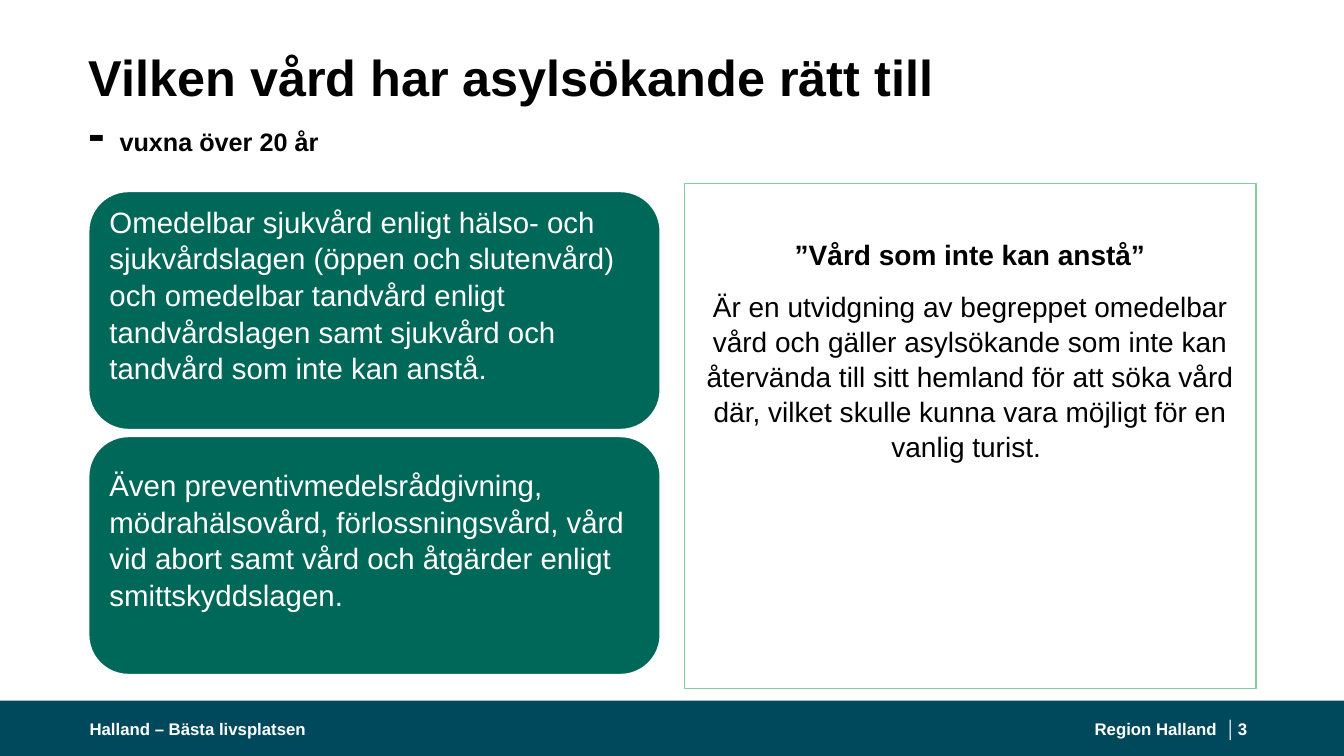
from dataclasses import dataclass

from pptx import Presentation
from pptx.dml.color import RGBColor
from pptx.enum import shapes, text
from pptx.util import Pt

INK = {"white": "FFFFFF", "black": "000000", "navy": "00495D",
       "green": "006858", "mint": "82CD9E"}
LEFT, MID, RIGHT = text.PP_ALIGN.LEFT, text.PP_ALIGN.CENTER, text.PP_ALIGN.RIGHT
RECT, ROUND = shapes.MSO_SHAPE.RECTANGLE, shapes.MSO_SHAPE.ROUNDED_RECTANGLE


@dataclass
class Box:
    x: float
    y: float
    w: float
    h: float

    def place(self) -> list:
        return [Pt(v) for v in (self.x, self.y, self.w, self.h)]


@dataclass
class Label:
    words: str
    box: Box
    align: int


CARDS = [
    "Omedelbar sjukvård enligt hälso- och sjukvårdslagen (öppen och slutenvård) "
    "och omedelbar tandvård enligt tandvårdslagen samt sjukvård och tandvård "
    "som inte kan anstå.",
    "Även preventivmedelsrådgivning, mödrahälsovård, förlossningsvård, vård vid "
    "abort samt vård och åtgärder enligt smittskyddslagen.",
]
FOOT = [
    Label("Halland – Bästa livsplatsen", Box(64, 508.4, 324, 25), LEFT),
    Label("Region Halland  │", Box(770.4, 508.4, 113, 25), RIGHT),
    Label("3", Box(884.2, 508.4, 17.3, 25), LEFT),
]


def tint(name: str) -> RGBColor:
    return RGBColor.from_string(INK[name])


def shape(slide, kind, box: Box, fill: str, line: str = ""):
    item = slide.shapes.add_shape(kind, *box.place())
    item.shadow.inherit = False
    item.fill.solid()
    item.fill.fore_color.rgb = tint(fill)
    if line:
        item.line.color.rgb = tint(line)
        item.line.width = Pt(1)
    else:
        item.line.fill.background()
    return item


def frame(item, top: float = 0, low: float = 0, side: float = 0,
          anchor=text.MSO_ANCHOR.MIDDLE):
    """Set wrap, insets and anchor of a shape's text frame."""
    body = item.text_frame
    body.word_wrap = True
    body.margin_top, body.margin_bottom = Pt(top), Pt(low)
    body.margin_left = body.margin_right = Pt(side)
    body.vertical_anchor = anchor
    return body


def write(para, words: str, *, size: float, color: str = "white",
          bold: bool = False, align=LEFT, gap: float = 0,
          pitch: float = 1.0) -> None:
    """Add a run to a paragraph and set the paragraph's format."""
    para.alignment = align
    para.space_before = Pt(gap)
    para.line_spacing = pitch
    run = para.add_run()
    run.text = words
    run.font.name, run.font.size, run.font.bold = "Arial", Pt(size), bold
    run.font.color.rgb = tint(color)


def title(slide) -> None:
    body = frame(slide.shapes.add_textbox(*Box(63.4, 25.9, 833.8, 102.2).place()))
    style = dict(color="black", bold=True, pitch=0.9)
    write(body.paragraphs[0], "Vilken vård har asylsökande rätt till", size=36, **style)
    sub = body.add_paragraph()
    write(sub, "- ", size=36, **style)
    write(sub, "vuxna över 20 år", size=18, **style)


def panel(slide) -> None:
    box = shape(slide, RECT, Box(488.9, 131, 408.2, 361), "white", "mint")
    body = frame(box, top=38, anchor=text.MSO_ANCHOR.TOP)
    style = dict(size=20, color="black", align=MID, pitch=1.04)
    write(body.paragraphs[0], "”Vård som inte kan anstå”", bold=True, **style)
    write(body.add_paragraph(),
          "Är en utvidgning av begreppet omedelbar vård och gäller asylsökande "
          "som inte kan återvända till sitt hemland för att söka vård där, "
          "vilket skulle kunna vara möjligt för en vanlig turist. ",
          gap=12, **style)


def cards(slide) -> None:
    for i, words in enumerate(CARDS):
        box = Box(63.4, 136.8 + 175 * i, 408.2, 170)
        item = shape(slide, ROUND, box, "green", "white")
        body = frame(item, top=6.5, low=30, side=6.5)
        write(body.paragraphs[0], words, size=21, pitch=1.04)


def footer(slide) -> None:
    shape(slide, RECT, Box(0, 500.4, 960, 39.6), "navy")
    for label in FOOT:
        body = frame(slide.shapes.add_textbox(*label.box.place()))
        write(body.paragraphs[0], label.words, size=12, bold=True, align=label.align)


def main() -> None:
    deck = Presentation()
    deck.slide_width, deck.slide_height = Pt(960), Pt(540)
    slide = deck.slides.add_slide(deck.slide_layouts[6])
    footer(slide)
    title(slide)
    panel(slide)
    cards(slide)
    deck.save("out.pptx")


if __name__ == "__main__":
    main()
